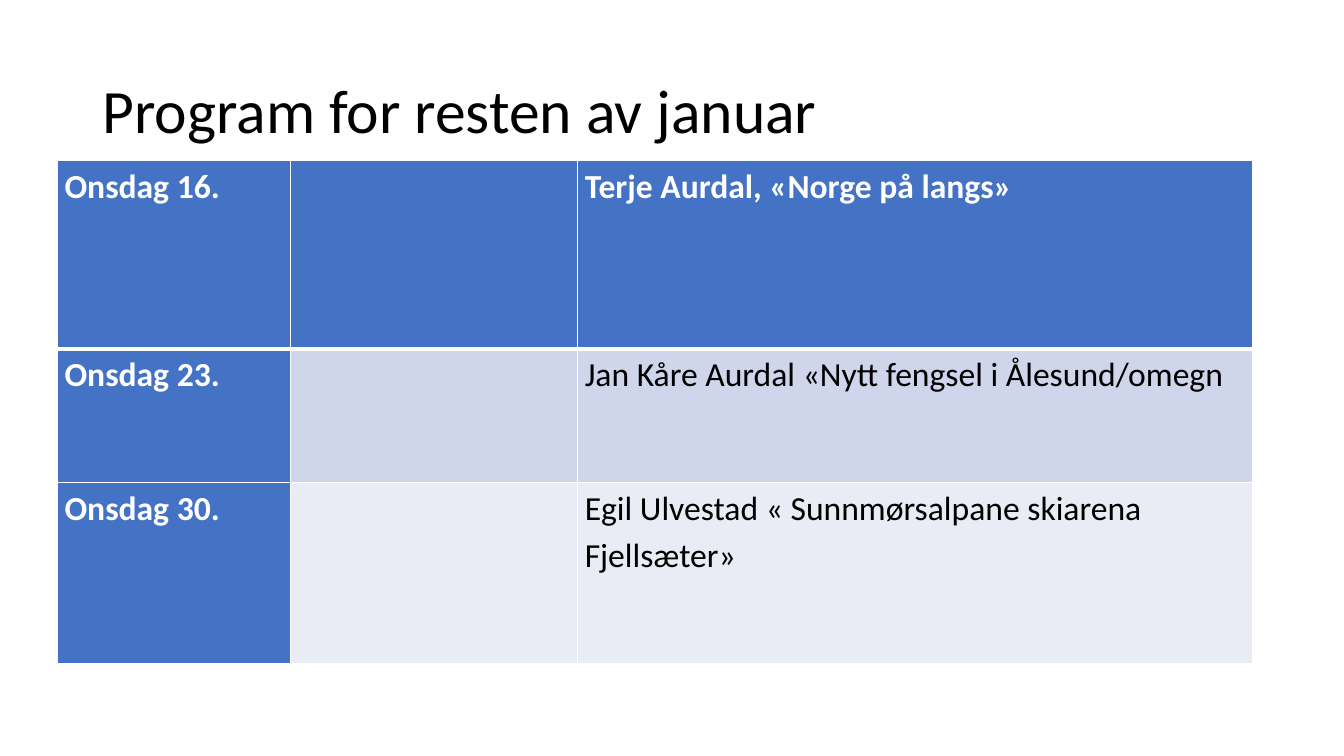
import pptx
import pptx.dml.color
import pptx.enum.text
import pptx.oxml
import pptx.oxml.ns
import pptx.util

PX = 9144  # 100 px to the inch
FONT = "Calibri"
WHITE, BLACK, BLUE = "FFFFFF", "000000", "4472C4"
BAND_FILLS = ["CFD5EA", "E9EBF5"]

PROGRAM = [
    ("Onsdag 16.", "", "Terje Aurdal, «Norge på langs»"),
    ("Onsdag 23.", "", "Jan Kåre Aurdal «Nytt fengsel i Ålesund/omegn"),
    ("Onsdag 30.", "", "Egil Ulvestad « Sunnmørsalpane skiarena Fjellsæter»"),
]
COLUMN_WIDTHS = [231, 285, 669]
ROW_HEIGHTS = [187, 133, 179]


def px(length):
    return pptx.util.Emu(length * PX)


def color(hex_string):
    return pptx.dml.color.RGBColor.from_string(hex_string)


def style_paragraph(paragraph, size, text_color, spacing, bold=False):
    paragraph.line_spacing = spacing
    for run in paragraph.runs:
        run.font.name = FONT
        run.font.size = pptx.util.Pt(size)
        run.font.bold = bold
        run.font.color.rgb = color(text_color)


def add_title(slide, left, top, width, height, text):
    shape = slide.shapes.add_textbox(px(left), px(top), px(width), px(height))
    text_frame = shape.text_frame
    text_frame.word_wrap = True
    text_frame.vertical_anchor = pptx.enum.text.MSO_ANCHOR.MIDDLE
    text_frame.text = text
    style_paragraph(text_frame.paragraphs[0], 44, BLACK, 0.9)


def set_borders(cell, widths):
    """Draw white borders; widths maps each side (L, R, T, B) to points."""
    properties = cell._tc.get_or_add_tcPr()
    for side, width in widths.items():
        properties.append(pptx.oxml.parse_xml(
            f'<a:ln{side} {pptx.oxml.ns.nsdecls("a")} w="{pptx.util.Pt(width)}">'
            f'<a:solidFill><a:srgbClr val="{WHITE}"/></a:solidFill></a:ln{side}>'))


def style_cell(cell, text, row, column):
    emphasized = row == 0 or column == 0
    set_borders(cell, {"L": 1, "R": 1,
                       "T": 3 if row == 1 else 1,
                       "B": 3 if row == 0 else 1})
    cell.fill.solid()
    cell.fill.fore_color.rgb = color(BLUE if emphasized else BAND_FILLS[(row - 1) % 2])
    cell.margin_left = cell.margin_right = px(7)
    cell.margin_top = cell.margin_bottom = 0
    cell.text_frame.text = text
    style_paragraph(cell.text_frame.paragraphs[0], 24,
                    WHITE if emphasized else BLACK, 1.15, emphasized)


def add_program_table(slide, left, top):
    table = slide.shapes.add_table(
        len(ROW_HEIGHTS), len(COLUMN_WIDTHS), px(left), px(top),
        px(sum(COLUMN_WIDTHS)), px(sum(ROW_HEIGHTS))).table
    for column, width in zip(table.columns, COLUMN_WIDTHS):
        column.width = px(width)
    for row, height in zip(table.rows, ROW_HEIGHTS):
        row.height = px(height)
    for row, texts in enumerate(PROGRAM):
        for column, text in enumerate(texts):
            style_cell(table.cell(row, column), text, row, column)


def main():
    presentation = pptx.Presentation()
    presentation.slide_width = px(1333)
    presentation.slide_height = px(750)
    slide = presentation.slides.add_slide(presentation.slide_layouts[6])

    # Heading
    add_title(slide, 92, 40, 1150, 145, "Program for resten av januar")
    # Dates and speakers
    add_program_table(slide, 57, 159)

    presentation.save("out.pptx")


if __name__ == "__main__":
    main()
